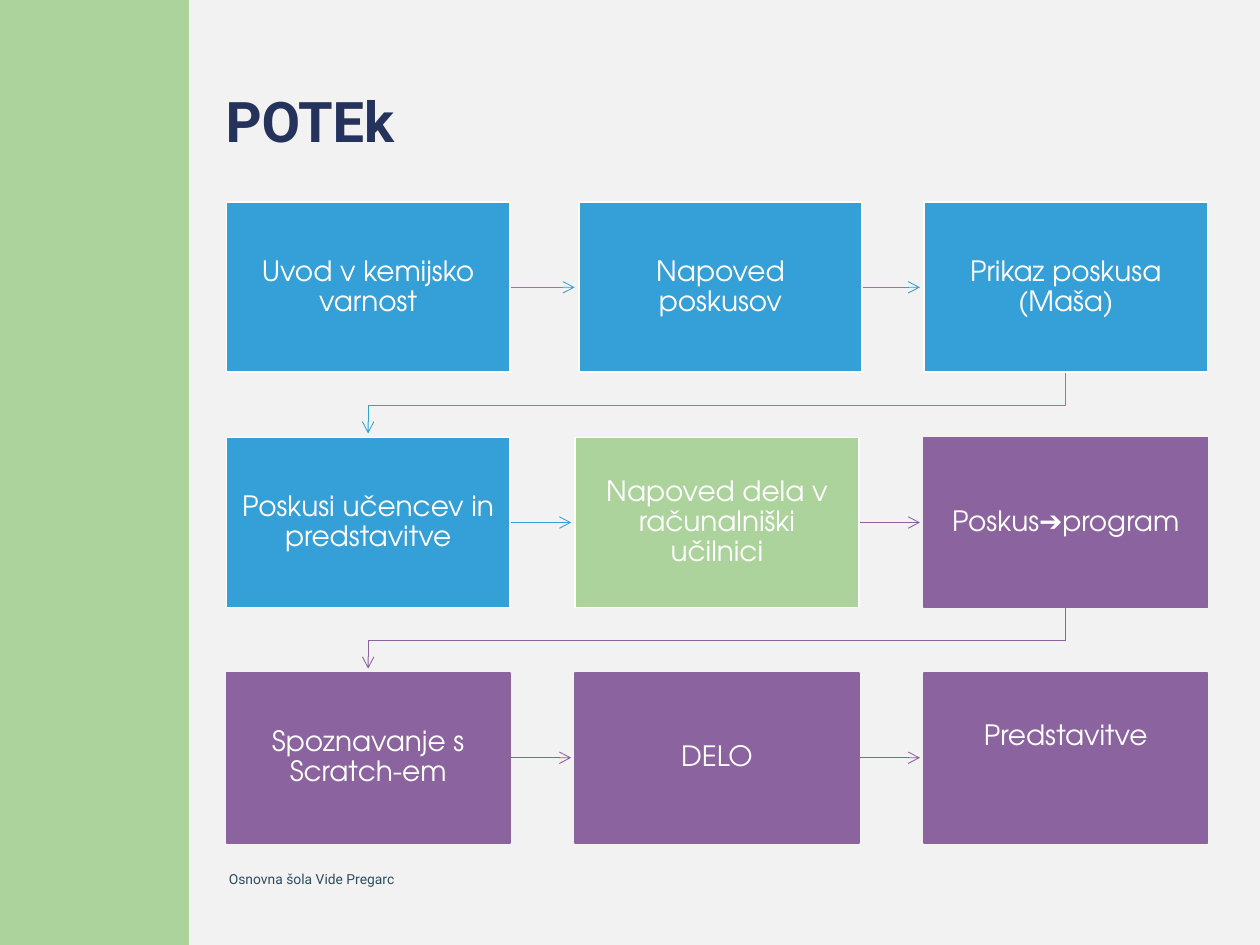
from lxml import etree
from pptx import Presentation
from pptx.dml.color import RGBColor
from pptx.enum import shapes, text
from pptx.oxml import ns
from pptx.util import Pt

BLUE = RGBColor(0x35, 0x9F, 0xD7)
GREEN = RGBColor(0xAC, 0xD3, 0x9B)
PURPLE = RGBColor(0x8B, 0x63, 0x9F)
NAVY = RGBColor(0x25, 0x32, 0x5B)
SLATE = RGBColor(0x2E, 0x4C, 0x5F)
WHITE = RGBColor(0xFF, 0xFF, 0xFF)
PAPER = RGBColor(0xF2, 0xF2, 0xF2)

STEP_WIDTH, STEP_HEIGHT = 162, 97.2
ARROW_GAP = 2.3
INSET = 8.6

# label, fill, outline, outgoing arrow, horizontal nudge, extra bottom inset
STEPS = [
    [("Uvod v kemijsko varnost", BLUE, WHITE, BLUE, 0, 0),
     ("Napoved poskusov", BLUE, WHITE, BLUE, 2, 0),
     ("Prikaz poskusa (Maša)", BLUE, WHITE, BLUE, 0, 0)],
    [("Poskusi učencev in predstavitve", BLUE, WHITE, BLUE, 0, 0),
     ("Napoved dela v računalniški učilnici", GREEN, WHITE, PURPLE, 0, 0),
     ("Poskus➔program", PURPLE, PURPLE, PURPLE, 0, 0)],
    [("Spoznavanje s Scratch-em", PURPLE, PURPLE, PURPLE, 0, 0),
     ("DELO", PURPLE, PURPLE, PURPLE, 0, 0),
     ("Predstavitve", PURPLE, PURPLE, None, 0, 24)],
]


def style_text(frame, words, font, size, color, bold=False, inset=0):
    """Write one wrapped, vertically centred paragraph and return it."""
    frame.word_wrap = True
    frame.vertical_anchor = text.MSO_ANCHOR.MIDDLE
    frame.margin_left = frame.margin_right = Pt(inset)
    frame.margin_top = frame.margin_bottom = Pt(inset)
    para = frame.paragraphs[0]
    para.text = words
    para.font.name = font
    para.font.size = Pt(size)
    para.font.bold = bold
    para.font.color.rgb = color
    return para


def add_label(page, left, top, width, height, words, size, color, bold=False):
    """Place a plain text box."""
    box = page.shapes.add_textbox(Pt(left), Pt(top), Pt(width), Pt(height))
    return style_text(box.text_frame, words, "Roboto", size, color, bold)


def add_sidebar(page, left, top, width, height):
    """Place the green band."""
    band = page.shapes.add_shape(shapes.MSO_SHAPE.RECTANGLE,
                                 Pt(left), Pt(top), Pt(width), Pt(height))
    band.shadow.inherit = False
    band.fill.solid()
    band.fill.fore_color.rgb = GREEN
    band.line.fill.background()


def style_arrow(arrow, color):
    """Give a line its colour, width and open arrowhead, without shadow."""
    arrow.line.color.rgb = color
    arrow.line.width = Pt(0.5)
    properties = arrow._element.spPr
    outline = properties.find(ns.qn("a:ln"))
    etree.SubElement(outline, ns.qn("a:tailEnd"), type="arrow")
    if properties.find(ns.qn("a:effectLst")) is None:
        etree.SubElement(properties, ns.qn("a:effectLst"))


def add_straight_arrow(page, left, right, middle, color):
    """Link two steps of one row."""
    arrow = page.shapes.add_connector(shapes.MSO_CONNECTOR.STRAIGHT,
                                      Pt(left), Pt(middle), Pt(right), Pt(middle))
    style_arrow(arrow, color)


def add_return_arrow(page, start, end, color):
    """Link the end of one row to the start of the next."""
    bend = start[1] + 18.7
    builder = page.shapes.build_freeform(Pt(start[0]), Pt(start[1]))
    corners = [(start[0], bend), (end[0], bend), end]
    builder.add_line_segments([(Pt(x), Pt(y)) for x, y in corners], close=False)
    arrow = builder.convert_to_shape()
    arrow.shadow.inherit = False
    arrow.fill.background()
    style_arrow(arrow, color)


def add_step(page, left, top, words, fill, outline, extra):
    """Place one step of the process."""
    step = page.shapes.add_shape(shapes.MSO_SHAPE.RECTANGLE, Pt(left), Pt(top),
                                 Pt(STEP_WIDTH), Pt(STEP_HEIGHT))
    step.shadow.inherit = False
    step.fill.solid()
    step.fill.fore_color.rgb = fill
    step.line.color.rgb = outline
    step.line.width = Pt(1)
    para = style_text(step.text_frame, words, "TeX Gyre Adventor", 16, WHITE, inset=INSET)
    para.alignment = text.PP_ALIGN.CENTER
    para.line_spacing = 0.9
    step.text_frame.margin_bottom = Pt(INSET + extra)


def add_process(page, left, top, width, height):
    """Lay out the steps in rows and columns, joined in reading order."""
    across = (width - STEP_WIDTH) / 2
    down = (height - STEP_HEIGHT) / 2
    for row, steps in enumerate(STEPS):
        y = top + row * down
        for column, (words, fill, outline, link, nudge, extra) in enumerate(steps):
            x = left + column * across + nudge
            if link and column < 2:
                target = left + (column + 1) * across + steps[column + 1][4]
                add_straight_arrow(page, x + STEP_WIDTH, target - ARROW_GAP,
                                   y + STEP_HEIGHT / 2, link)
            elif link:
                add_return_arrow(page, (x + STEP_WIDTH / 2, y + STEP_HEIGHT),
                                 (left + STEP_WIDTH / 2, y + down - ARROW_GAP), link)
            add_step(page, x, y, words, fill, outline, extra)


def main():
    """Build the deck."""
    deck = Presentation()
    deck.slide_width, deck.slide_height = Pt(720), Pt(540)
    page = deck.slides.add_slide(deck.slide_layouts[6])
    page.background.fill.solid()
    page.background.fill.fore_color.rgb = PAPER
    add_sidebar(page, 0, 0, 108, 540)
    add_label(page, 130.8, 497.5, 349, 9.5, "Osnovna šola Vide Pregarc", 7.9, SLATE)
    title = add_label(page, 128.9, 24.5, 551.5, 93.6, "POTEk", 32, NAVY, bold=True)
    title.line_spacing = 0.9
    add_process(page, 129.4, 115.6, 560.6, 366)
    deck.save("out.pptx")


if __name__ == "__main__":
    main()
